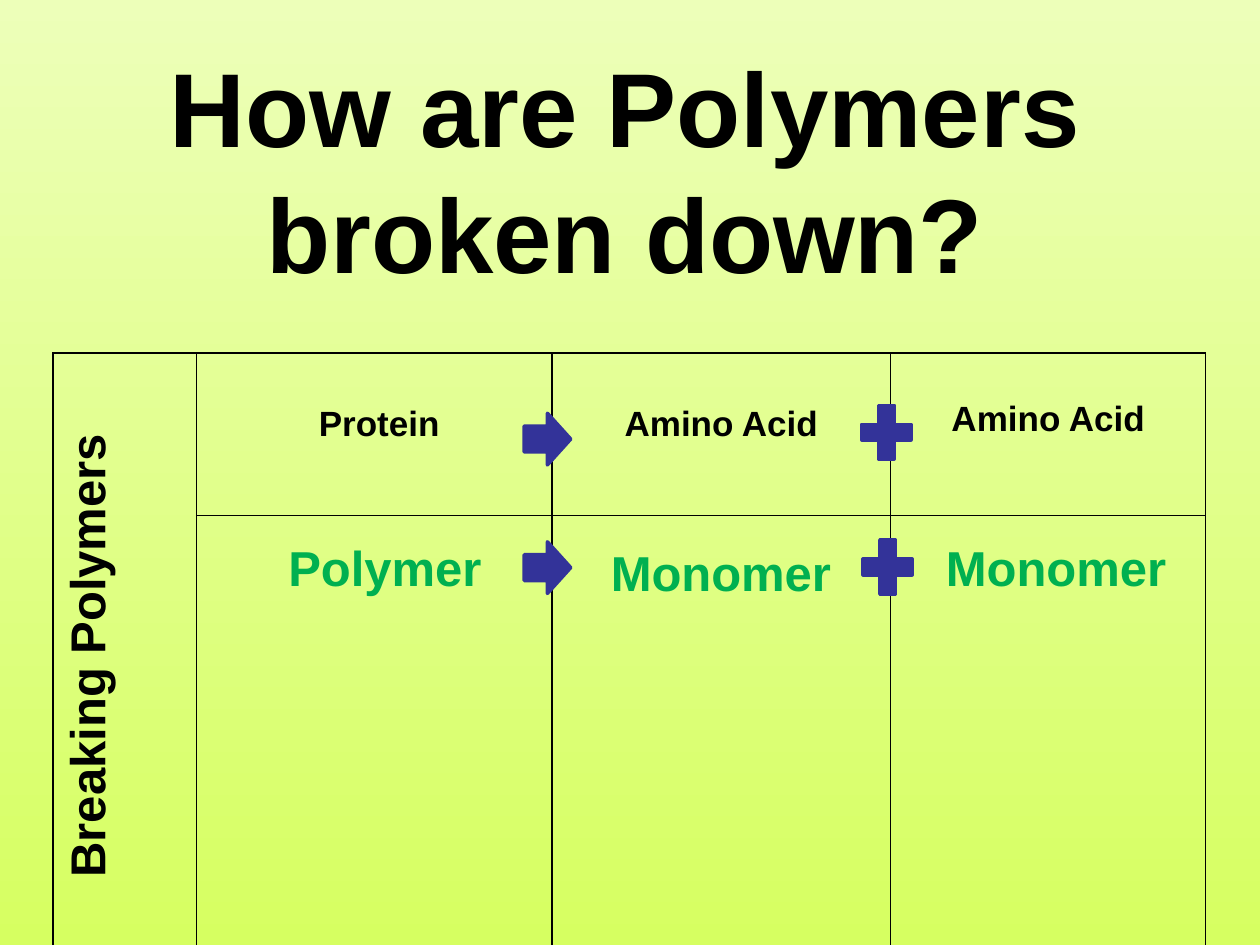
from pptx import Presentation
from pptx.util import Inches, Pt
from pptx.dml.color import RGBColor
from pptx.enum import shapes, text
from pptx.oxml.ns import qn
from lxml import etree

HUES = {"top": "EDFFB9", "base": "D6FF61", "ink": "000000",
        "green": "00B050", "blue": "333399"}


def write(frame, words, size=20, hue="ink", align="CENTER", space=None, dent=0):
    para = frame.paragraphs[0]
    para.alignment = text.PP_ALIGN[align]
    if space:
        para.line_spacing = space
    if dent:
        para._p.get_or_add_pPr().set("marL", str(Inches(dent)))
    run = para.add_run()
    run.text = words
    run.font.name = "Arial"
    run.font.size = Pt(size)
    run.font.bold = True
    run.font.color.rgb = RGBColor.from_string(HUES[hue])


deck = Presentation()
deck.slide_width, deck.slide_height = Inches(10), Inches(7.5)
slide = deck.slides.add_slide(deck.slide_layouts[6])

fill = slide.background.fill
fill.gradient()
fill.gradient_angle = 270
for stop, hue, place in zip(fill.gradient_stops, ("top", "base"), (0, 1)):
    stop.color.rgb = RGBColor.from_string(HUES[hue])
    stop.position = place

title = slide.shapes.add_textbox(Inches(-0.04), Inches(0.36), Inches(10), Inches(1.95))
title.text_frame.word_wrap = True
title.text_frame.vertical_anchor = text.MSO_ANCHOR.MIDDLE
write(title.text_frame, "How are Polymers broken down?", size=60)

cols, rows = [1.14, 2.82, 2.69, 2.5], [1.29, 0.77]
table = slide.shapes.add_table(2, 4, Inches(0.42), Inches(2.8),
                               Inches(sum(cols)), Inches(sum(rows))).table
table.first_row = table.horz_banding = False
for col, wide in zip(table.columns, cols):
    col.width = Inches(wide)
for row, high in zip(table.rows, rows):
    row.height = Inches(high)
for cell in table.iter_cells():
    cell.margin_left = cell.margin_right = Inches(0.07)
    cell.margin_top = cell.margin_bottom = 0
    props = cell._tc.get_or_add_tcPr()
    for side in ("lnL", "lnR", "lnT", "lnB"):
        edge = etree.SubElement(props, qn("a:" + side), w=str(Pt(1)))
        paint = etree.SubElement(edge, qn("a:solidFill"))
        etree.SubElement(paint, qn("a:srgbClr"), val=HUES["ink"])
    cell.fill.background()

head = table.cell(0, 0)
head.merge(table.cell(1, 0))
head._tc.get_or_add_tcPr().set("vert", "vert270")
write(head.text_frame, "Breaking Polymers", size=28, space=1.15, dent=0.08)

for col, words, drop, dent in [(1, "Protein", 0.37, 0.08),
                               (2, "Amino Acid", 0.37, 0),
                               (3, "Amino Acid", 0.33, 0)]:
    cell = table.cell(0, col)
    cell.margin_top = Inches(drop)
    write(cell.text_frame, words, space=1.15, dent=dent)

kinds = shapes.MSO_SHAPE
for kind, left, top, wide, high in [
        (kinds.MATH_PLUS, 6.77, 3.14, 0.53, 0.58),
        (kinds.RIGHT_ARROW, 4.16, 3.28, 0.37, 0.41),
        (kinds.MATH_PLUS, 6.78, 4.21, 0.53, 0.58),
        (kinds.RIGHT_ARROW, 4.16, 4.3, 0.37, 0.41)]:
    sign = slide.shapes.add_shape(kind, Inches(left), Inches(top),
                                  Inches(wide), Inches(high))
    sign.shadow.inherit = False
    sign.fill.solid()
    sign.fill.fore_color.rgb = RGBColor.from_string(HUES["blue"])
    sign.line.color.rgb = RGBColor.from_string(HUES["blue"])
    sign.line.width = Pt(2)

for words, left, top, wide in [("Monomer", 4.75, 4.26, 1.97),
                               ("Monomer", 7.41, 4.22, 1.97),
                               ("Polymer", 2.19, 4.22, 1.75)]:
    label = slide.shapes.add_textbox(Inches(left), Inches(top), Inches(wide), Inches(0.57))
    label.text_frame.word_wrap = False
    label.text_frame.auto_size = text.MSO_AUTO_SIZE.SHAPE_TO_FIT_TEXT
    write(label.text_frame, words, size=28, hue="green", align="LEFT")

deck.save("out.pptx")
